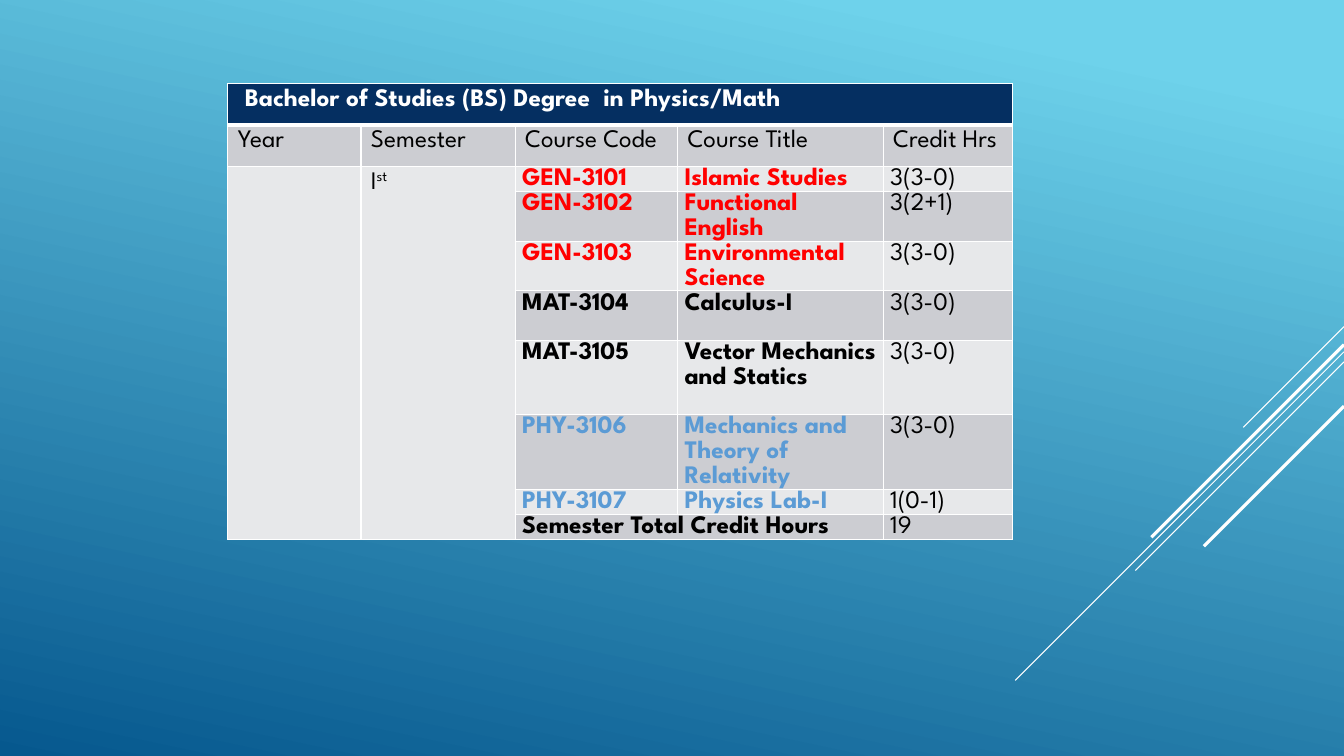
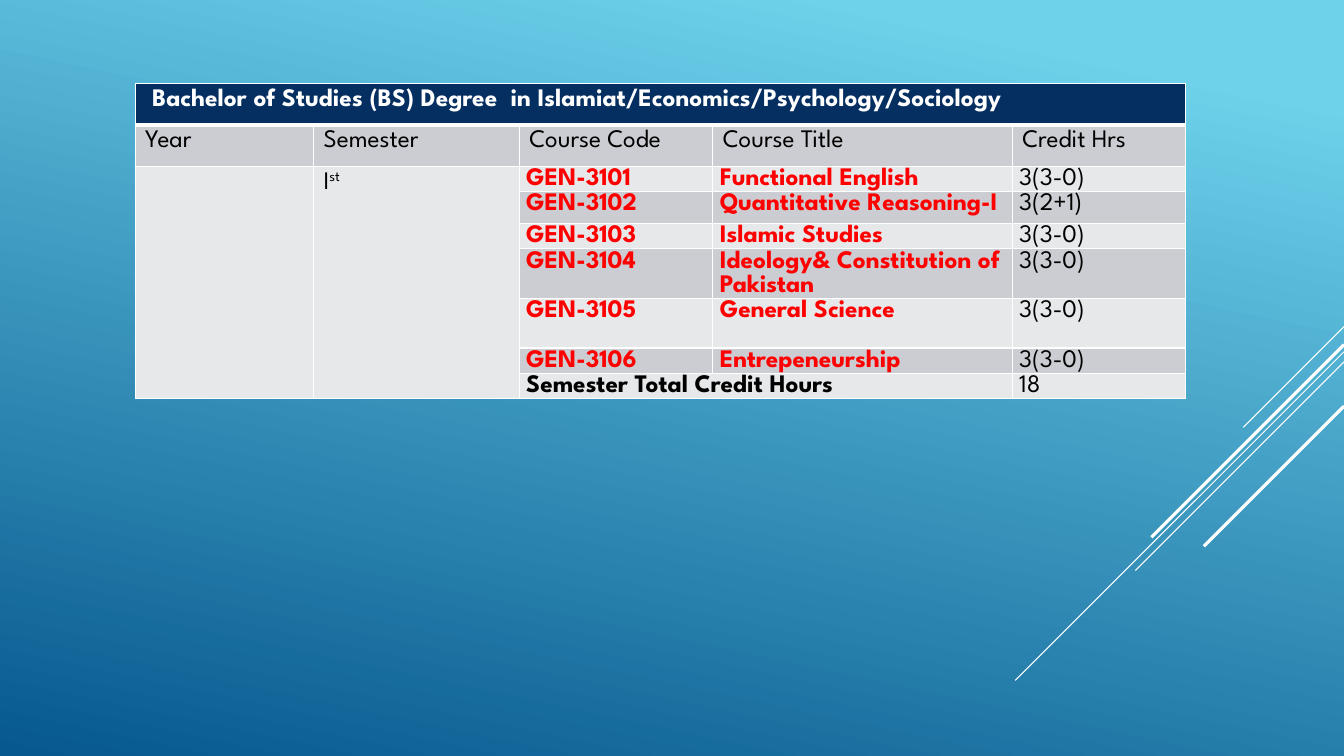
from dataclasses import dataclass

from lxml.etree import SubElement
from pptx import Presentation
from pptx.dml.color import RGBColor as Rgb
from pptx.enum.shapes import MSO_CONNECTOR as Connector
from pptx.oxml.ns import qn
from pptx.util import Inches, Pt


@dataclass(frozen=True)
class Theme:
    font: str = "League Spartan"
    size: Pt = Pt(18)
    sky: Rgb = Rgb.from_string("6ED2EB")
    deep: Rgb = Rgb.from_string("06588E")
    navy: Rgb = Rgb.from_string("052F61")
    light_band: Rgb = Rgb.from_string("E7E8EA")
    dark_band: Rgb = Rgb.from_string("CCCDD2")
    white: Rgb = Rgb.from_string("FFFFFF")
    black: Rgb = Rgb.from_string("000000")
    red: Rgb = Rgb.from_string("FF0000")
    blue: Rgb = Rgb.from_string("5B9BD5")
    thin: Pt = Pt(0.75)
    thick: Pt = Pt(2.25)
    border: Pt = Pt(1)
    title_border: Pt = Pt(3)


THEME = Theme()
SLIDE_WIDTH, SLIDE_HEIGHT = 13.33, 7.5
TABLE_TOP = 0.83
HEADINGS = ["Year", "Semester", "Course Code", "Course Title", "Credit Hrs"]
HEADING_HEIGHTS = [0.41, 0.41]
TITLE_MARGINS = {"margin_left": Inches(0.17)}
BODY_MARGINS = {"margin_left": Inches(0.07), "margin_right": Inches(0.07),
                "margin_top": 0, "margin_bottom": 0}

# Each diagonal: height at the right edge, horizontal run, line width
DIAGONALS = [
    (3.24, 1.00, THEME.thin),
    (3.49, 3.26, THEME.thin),
    (3.59, 2.07, THEME.thin),
    (3.42, 1.91, THEME.thick),
    (4.03, 1.39, THEME.thick),
]

# Each course: code, title, credit hours, colour, row height
PROGRAMS = [
    {
        "title": "Bachelor of Studies (BS) Degree  in Physics/Math",
        "left": 2.26,
        "columns": [1.32, 1.53, 1.61, 2.04, 1.28],
        "courses": [
            ("GEN-3101", "Islamic Studies", "3(3-0)", THEME.red, 0.25),
            ("GEN-3102", "Functional English", "3(2+1)", THEME.red, 0.49),
            ("GEN-3103", "Environmental Science", "3(3-0)", THEME.red, 0.49),
            ("MAT-3104", "Calculus-I", "3(3-0)", THEME.black, 0.49),
            ("MAT-3105", "Vector Mechanics and Statics", "3(3-0)", THEME.black, 0.74),
            ("PHY-3106", "Mechanics and Theory of Relativity", "3(3-0)", THEME.blue, 0.74),
            ("PHY-3107", "Physics Lab-I", "1(0-1)", THEME.blue, 0.25),
        ],
        "total": "19",
    },
    {
        "title": "Bachelor of Studies (BS) Degree  in Islamiat/Economics/Psychology/Sociology",
        "left": 1.34,
        "columns": [1.77, 2.04, 1.92, 2.97, 1.72],
        "courses": [
            ("GEN-3101", "Functional English", "3(3-0)", THEME.red, 0.25),
            ("GEN-3102", "Quantitative Reasoning-I", "3(2+1)", THEME.red, 0.32),
            ("GEN-3103", "Islamic Studies", "3(3-0)", THEME.red, 0.25),
            ("GEN-3104", "Ideology& Constitution of Pakistan", "3(3-0)", THEME.red, 0.49),
            ("GEN-3105", "General Science", "3(3-0)", THEME.red, 0.49),
            ("GEN-3106", "Entrepeneurship", "3(3-0)", THEME.red, 0.25),
        ],
        "total": "18",
    },
]
TOTAL_HEIGHT = 0.25


def set_all(target, values):
    for name, value in values.items():
        setattr(target, name, value)


def set_background(master):
    fill = master.background.fill
    fill.gradient()
    fill.gradient_angle = 360 - 102
    stops = [(0.1, THEME.sky), (1.0, THEME.deep)]
    for stop, (position, color) in zip(fill.gradient_stops, stops):
        stop.position = position
        stop.color.rgb = color


def add_diagonals(slide, master):
    """Draw the 45-degree lines and move them to the master, for all slides."""
    for number, (top, run, width) in enumerate(DIAGONALS):
        diagonal = slide.shapes.add_connector(
            Connector.STRAIGHT, Inches(SLIDE_WIDTH), Inches(top),
            Inches(SLIDE_WIDTH - run), Inches(top + run))
        diagonal.line.color.rgb = THEME.white
        diagonal.line.width = width
        SubElement(diagonal.element.spPr, qn("a:effectLst"))
        diagonal.element.nvCxnSpPr.cNvPr.id = 20 + number
        master.shapes.element.append(diagonal.element)


def set_borders(cell, top=THEME.border, bottom=THEME.border):
    widths = {"a:lnL": THEME.border, "a:lnR": THEME.border,
              "a:lnT": top, "a:lnB": bottom}
    properties = cell._tc.get_or_add_tcPr()
    for tag, width in widths.items():
        edge = SubElement(properties, qn(tag), w=str(int(width)))
        fill = SubElement(edge, qn("a:solidFill"))
        SubElement(fill, qn("a:srgbClr"), val=str(THEME.white))


def paint_row(table, row, color, **borders):
    for column in range(len(HEADINGS)):
        cell = table.cell(row, column)
        set_borders(cell, **borders)
        cell.fill.solid()
        cell.fill.fore_color.rgb = color


def add_text(cell, text, color=THEME.black, bold=False):
    run = cell.text_frame.paragraphs[0].add_run()
    run.text = text
    set_all(run.font, {"name": THEME.font, "size": THEME.size, "bold": bold})
    run.font.color.rgb = color
    return run


def write_body(cell, text, color=THEME.black, bold=False):
    set_all(cell, BODY_MARGINS)
    cell.text_frame.paragraphs[0].line_spacing = 1.07
    add_text(cell, text, color, bold)


def write_semester(cell):
    add_text(cell, "I")
    ordinal = add_text(cell, "st")
    ordinal._r.get_or_add_rPr().set("baseline", "30000")


def add_program_table(slide, program):
    courses, columns = program["courses"], program["columns"]
    heights = HEADING_HEIGHTS + [course[-1] for course in courses] + [TOTAL_HEIGHT]
    table = slide.shapes.add_table(
        len(heights), len(columns), Inches(program["left"]), Inches(TABLE_TOP),
        Inches(sum(columns)), Inches(sum(heights))).table
    set_all(table, {"first_row": False, "horz_banding": False})
    for column, width in zip(table.columns, columns):
        column.width = Inches(width)
    for row, height in zip(table.rows, heights):
        row.height = Inches(height)

    first, last = len(HEADING_HEIGHTS), len(heights) - 1
    paint_row(table, 0, THEME.navy, bottom=THEME.title_border)
    paint_row(table, 1, THEME.dark_band, top=THEME.title_border)
    for row in range(first, last + 1):
        paint_row(table, row, THEME.dark_band if row % 2 else THEME.light_band)

    title = table.cell(0, 0)
    title.merge(table.cell(0, len(columns) - 1))
    set_all(title, TITLE_MARGINS)
    add_text(title, program["title"], THEME.white, bold=True)
    for column, heading in enumerate(HEADINGS):
        add_text(table.cell(1, column), heading)

    for column in (0, 1):
        table.cell(first, column).merge(table.cell(last, column))
    write_semester(table.cell(first, 1))
    for row, (code, name, hours, color, _) in enumerate(courses, first):
        write_body(table.cell(row, 2), code, color, bold=True)
        write_body(table.cell(row, 3), name, color, bold=True)
        write_body(table.cell(row, 4), hours)

    total = table.cell(last, 2)
    total.merge(table.cell(last, 3))
    write_body(total, "Semester Total Credit Hours", bold=True)
    write_body(table.cell(last, 4), program["total"])


def main():
    deck = Presentation()
    set_all(deck, {"slide_width": Inches(SLIDE_WIDTH),
                   "slide_height": Inches(SLIDE_HEIGHT)})
    blank = deck.slide_layouts[6]
    slides = [deck.slides.add_slide(blank) for _ in PROGRAMS]
    set_background(deck.slide_master)
    add_diagonals(slides[0], deck.slide_master)
    for slide, program in zip(slides, PROGRAMS):
        add_program_table(slide, program)
    deck.save("out.pptx")


if __name__ == "__main__":
    main()
